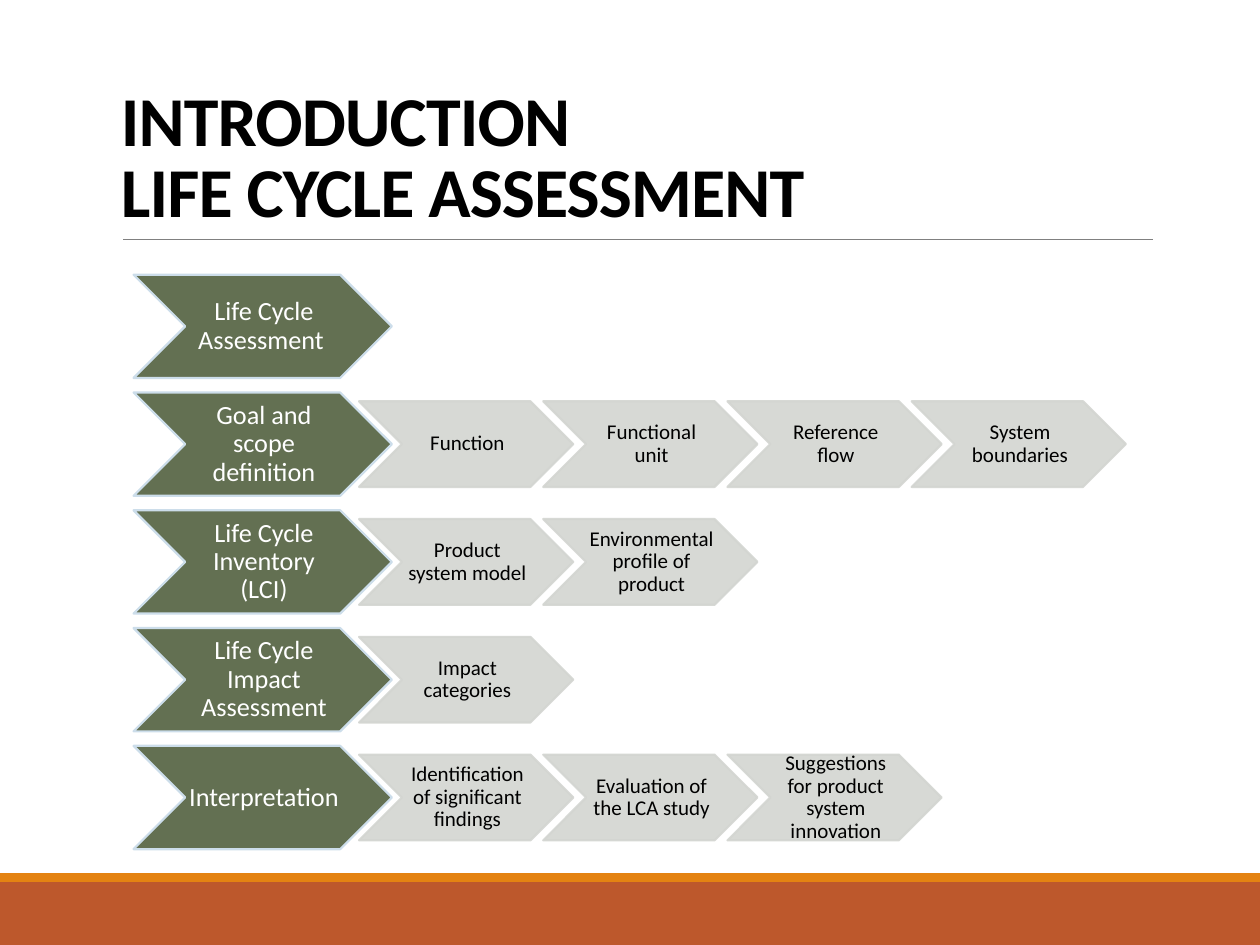
from dataclasses import dataclass

from lxml import etree
from pptx import Presentation
from pptx import util as u
from pptx.dml.color import RGBColor
from pptx.enum import shapes, text
from pptx.oxml import ns


@dataclass(frozen=True)
class Theme:
    font: str = "Calibri"
    ink: str = "000000"
    paper: str = "FFFFFF"
    stage: str = "637052"
    stage_edge: str = "CCDDEA"
    step: str = "D3D5D1"
    footer: str = "BD582C"
    footer_edge: str = "E48312"
    rule: str = "808080"
    title_size: float = 40
    stage_size: float = 15
    step_size: float = 12
    edge_width: float = 1.25
    rule_width: float = 0.5
    step_opacity: int = 90


COLUMNS, ROWS = 10, 7.5
LEFT, TOP = 1.06, 2.18
STAGE_WIDTH, STAGE_HEIGHT = 2.05, 0.82
STEP_WIDTH, STEP_HEIGHT = 1.7, 0.68
FIRST_STEP = 2.85
STAGE_PITCH = STAGE_HEIGHT * 1.14
STEP_PITCH = STEP_WIDTH * 0.86
STEP_DROP = (STAGE_HEIGHT - STEP_HEIGHT) / 2

TITLE = ("INTRODUCTION ", "LIFE CYCLE ASSESSMENT")
STAGES = (
    ("Life Cycle Assessment ", ()),
    ("Goal and scope definition",
     ("Function", "Functional unit", "Reference flow", "System boundaries")),
    ("Life Cycle Inventory (LCI)",
     ("Product system model", "Environmental profile of product")),
    ("Life Cycle Impact Assessment", ("Impact categories",)),
    ("Interpretation",
     ("Identification of significant findings", "Evaluation of the LCA study",
      "Suggestions for product system innovation")),
)


class SlideBuilder:
    """Places styled elements on a slide, measured in grid columns and rows."""

    def __init__(self, deck, theme):
        self.theme = theme
        self.column = deck.slide_width / COLUMNS
        self.row = deck.slide_height / ROWS
        self.slide = deck.slides.add_slide(deck.slide_layouts[5])

    def place(self, left, top, width, height):
        return (u.Emu(round(left * self.column)), u.Emu(round(top * self.row)),
                u.Emu(round(width * self.column)), u.Emu(round(height * self.row)))

    def add_span(self, para, words, size, color, bold=False):
        span = para.add_run()
        span.text = words
        span.font.name = self.theme.font
        span.font.size = u.Pt(size)
        span.font.bold = bold
        span.font.color.rgb = RGBColor.from_string(color)
        return span

    def title(self, lines, *area):
        box = self.slide.shapes.title
        box.left, box.top, box.width, box.height = self.place(*area)
        frame = box.text_frame
        frame.auto_size = text.MSO_AUTO_SIZE.NONE
        frame.vertical_anchor = text.MSO_ANCHOR.BOTTOM
        para = frame.paragraphs[0]
        para.alignment = text.PP_ALIGN.LEFT
        para.line_spacing = 0.85
        for number, line in enumerate(lines):
            if number:
                para.add_line_break()
            span = self.add_span(para, line, self.theme.title_size, self.theme.ink, bold=True)
            span.font._element.set("spc", "-50")

    def filled(self, kind, color, *area):
        shape = self.slide.shapes.add_shape(kind, *self.place(*area))
        shape.shadow.inherit = False
        shape.fill.solid()
        shape.fill.fore_color.rgb = RGBColor.from_string(color)
        return shape

    def band(self, color, *area):
        self.filled(shapes.MSO_SHAPE.RECTANGLE, color, *area).line.fill.background()

    def rule(self, left, right, top):
        x, y, width, _ = self.place(left, top, right - left, 0)
        line = self.slide.shapes.add_connector(
            shapes.MSO_CONNECTOR.STRAIGHT, x, y, x + width, y)
        line.line.color.rgb = RGBColor.from_string(self.theme.rule)
        line.line.width = u.Pt(self.theme.rule_width)
        etree.SubElement(line._element.spPr, ns.qn("a:effectLst"))

    def chevron(self, words, fill, edge, ink, size, area, opacity=100):
        shape = self.filled(shapes.MSO_SHAPE.CHEVRON, fill, *area)
        shape.line.color.rgb = RGBColor.from_string(edge)
        shape.line.width = u.Pt(self.theme.edge_width)
        if opacity < 100:
            for color in shape._element.spPr.iter(ns.qn("a:srgbClr")):
                etree.SubElement(color, ns.qn("a:alpha"), val=str(opacity * 1000))
        frame = shape.text_frame
        frame.word_wrap = True
        frame.vertical_anchor = text.MSO_ANCHOR.MIDDLE
        frame.margin_left, frame.margin_right = u.Inches(0.02), 0
        frame.margin_top = frame.margin_bottom = u.Inches(0.01)
        para = frame.paragraphs[0]
        para.alignment = text.PP_ALIGN.CENTER
        para.line_spacing = 0.9
        self.add_span(para, words, size, ink)

    def stage(self, words, top):
        look = self.theme
        self.chevron(words, look.stage, look.stage_edge, look.paper, look.stage_size,
                     (LEFT, top, STAGE_WIDTH, STAGE_HEIGHT))

    def step(self, words, left, top):
        look = self.theme
        self.chevron(words, look.step, look.step, look.ink, look.step_size,
                     (left, top, STEP_WIDTH, STEP_HEIGHT), look.step_opacity)


def main():
    deck = Presentation()
    deck.slide_width, deck.slide_height = u.Inches(10), u.Inches(7.5)
    theme = Theme()
    page = SlideBuilder(deck, theme)
    page.band(theme.footer, 0, 7, COLUMNS, 0.5)
    page.band(theme.footer_edge, 0, 6.93, COLUMNS, 0.07)
    page.rule(0.98, 9.15, 1.9)
    page.title(TITLE, 0.86, 0.25, 8.49, 1.64)
    for row, (stage, steps) in enumerate(STAGES):
        top = TOP + row * STAGE_PITCH
        page.stage(stage, top)
        for column, step in enumerate(steps):
            page.step(step, FIRST_STEP + column * STEP_PITCH, top + STEP_DROP)
    deck.save("out.pptx")


if __name__ == "__main__":
    main()
